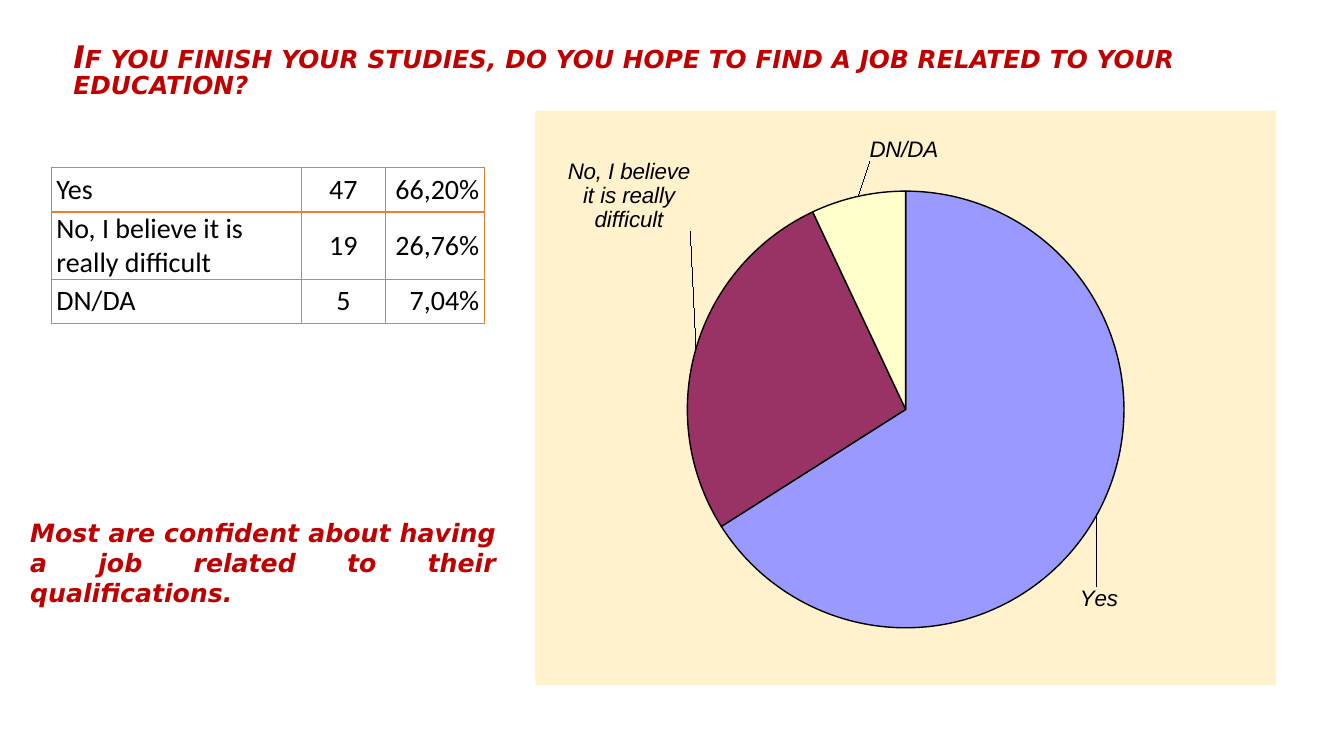
from lxml import etree
from pptx import Presentation
from pptx.chart.data import CategoryChartData
from pptx.dml.color import RGBColor
from pptx.enum.chart import XL_CHART_TYPE, XL_LABEL_POSITION
from pptx.enum.text import MSO_ANCHOR, PP_ALIGN
from pptx.oxml import parse_xml
from pptx.oxml.ns import nsdecls, qn
from pptx.util import Cm, Pt

LEFT, CENTER, RIGHT = PP_ALIGN.LEFT, PP_ALIGN.CENTER, PP_ALIGN.RIGHT
JUSTIFY = PP_ALIGN.JUSTIFY
MIDDLE = MSO_ANCHOR.MIDDLE
PIE = XL_CHART_TYPE.PIE
OUTSIDE_END = XL_LABEL_POSITION.OUTSIDE_END

RED, BLACK, ORANGE, CREAM = "C00000", "000000", "ED7D31", "FFF2CC"
SLICE_COLORS = ["9999FF", "993366", "FFFFCC"]
LABEL_SHIFTS = [(-0.03, 0.12), (0, -0.2), (0.11, -0.05)]

TITLE = ("If you finish your studies, do you hope to find a job "
         "related to your education?")
COMMENT = "Most are confident about having a job related to their qualifications."
ANSWERS = [
    ("Yes", "47", "66,20%"),
    ("No, I believe it is really difficult", "19", "26,76%"),
    ("DN/DA", "5", "7,04%"),
]
SHARES = [66, 27, 7]

HEADING_FONT = {"name": "DejaVu Sans", "bold": True, "italic": True}
CELL_FONT = {"name": "Calibri", "size": Pt(20)}
LABEL_FONT = {"name": "Arial", "size": Pt(16), "italic": True}


def rgb(value):
    return RGBColor.from_string(value)


def set_attrs(obj, values):
    for name, value in values.items():
        setattr(obj, name, value)


def set_font(font, values, color):
    set_attrs(font, values)
    font.color.rgb = rgb(color)


def add_heading(slide, box, text, size, paragraph_format):
    """Add a wrapped red bold italic text and return its run."""
    tf = slide.shapes.add_textbox(*box).text_frame
    tf.word_wrap = True
    p = tf.paragraphs[0]
    set_attrs(p, paragraph_format)
    r = p.add_run()
    r.text = text
    set_font(r.font, {**HEADING_FONT, "size": Pt(size)}, RED)
    return r


def add_title(slide, box):
    r = add_heading(slide, box, TITLE, 22.2, {"line_spacing": 0.7})
    r.font._element.set("cap", "small")


def add_comment(slide, box):
    add_heading(slide, box, COMMENT, 18, {"alignment": JUSTIFY})


def set_borders(cell, color):
    tc_pr = cell._tc.get_or_add_tcPr()
    for i, side in enumerate("LRTB"):
        tc_pr.insert(i, parse_xml(
            f'<a:ln{side} {nsdecls("a")} w="12700"><a:solidFill>'
            f'<a:srgbClr val="{color}"/></a:solidFill></a:ln{side}>'))


def add_answer_table(slide, box):
    table = slide.shapes.add_table(len(ANSWERS), 3, *box).table
    set_attrs(table, {"first_row": False, "horz_banding": False})
    for column, width in zip(table.columns, (6.3, 2.11, 2.49)):
        column.width = Cm(width)
    for row, answer in zip(table.rows, ANSWERS):
        for cell, text, align in zip(row.cells, answer, (LEFT, CENTER, RIGHT)):
            set_attrs(cell, {
                "text": text, "vertical_anchor": MIDDLE,
                "margin_left": Cm(0.12), "margin_right": Cm(0.12),
                "margin_top": 0, "margin_bottom": 0})
            cell.fill.background()
            set_borders(cell, ORANGE)
            p = cell.text_frame.paragraphs[0]
            p.alignment = align
            set_font(p.runs[0].font, CELL_FONT, BLACK)


def manual_layout(**values):
    layout = etree.Element(qn("c:layout"))
    manual = etree.SubElement(layout, qn("c:manualLayout"))
    for name, value in values.items():
        etree.SubElement(manual, qn(f"c:{name}")).set("val", str(value))
    return layout


def fill_chart_area(chart, color):
    chart._chartSpace.find(qn("c:chart")).addnext(parse_xml(
        f'<c:spPr {nsdecls("c", "a")}><a:solidFill><a:srgbClr val="{color}"/>'
        '</a:solidFill><a:ln><a:noFill/></a:ln></c:spPr>'))


def place_plot(chart):
    plot_area = chart._chartSpace.find(qn("c:chart")).find(qn("c:plotArea"))
    for layout in plot_area.findall(qn("c:layout")):
        plot_area.remove(layout)
    plot_area.insert(0, manual_layout(
        layoutTarget="inner", xMode="edge", yMode="edge",
        x=0.03, y=0.14, w=0.94, h=0.76))


def format_slice(point, labels, i):
    point.format.fill.solid()
    point.format.fill.fore_color.rgb = rgb(SLICE_COLORS[i])
    point.format.line.color.rgb = rgb(BLACK)
    point.format.line.width = Pt(1)
    label = point.data_label
    set_font(label.font, LABEL_FONT, BLACK)
    label.position = OUTSIDE_END
    x, y = LABEL_SHIFTS[i]
    d_lbl = labels._element.findall(qn("c:dLbl"))[i]
    d_lbl.find(qn("c:idx")).addnext(manual_layout(x=x, y=y))
    d_lbl.find(qn("c:showVal")).set("val", "0")
    d_lbl.find(qn("c:showCatName")).set("val", "1")


def add_answer_pie(slide, box):
    data = CategoryChartData()
    data.categories = [answer[0] for answer in ANSWERS]
    data.add_series("Series 1", SHARES)
    chart = slide.shapes.add_chart(PIE, *box, data).chart
    set_attrs(chart, {"has_legend": False, "has_title": False})
    set_font(chart.font, {"name": "Arial", "size": Pt(10)}, BLACK)
    fill_chart_area(chart, CREAM)
    place_plot(chart)
    plot = chart.plots[0]
    plot.vary_by_categories = True
    series = plot.series[0]
    labels = series.data_labels
    set_attrs(labels, {"show_category_name": True, "show_value": False,
                       "position": OUTSIDE_END})
    set_font(labels.font, LABEL_FONT, BLACK)
    for i in range(len(SHARES)):
        format_slice(series.points[i], labels, i)
    leader = labels._element.find(qn("c:showLeaderLines"))
    if leader is None:
        leader = etree.SubElement(labels._element, qn("c:showLeaderLines"))
    leader.set("val", "1")


def main():
    prs = Presentation()
    prs.slide_width, prs.slide_height = Cm(33.87), Cm(19.05)
    slide = prs.slides.add_slide(prs.slide_layouts[6])
    add_title(slide, (Cm(1.6), Cm(1.07), Cm(30.18), Cm(1.73)))
    add_comment(slide, (Cm(0.51), Cm(12.9), Cm(12.24), Cm(2.57)))
    add_answer_table(slide, (Cm(1.3), Cm(4.22), Cm(10.9), Cm(3.36)))
    add_answer_pie(slide, (Cm(13.49), Cm(2.79), Cm(18.67), Cm(14.48)))
    prs.save("out.pptx")


if __name__ == "__main__":
    main()
